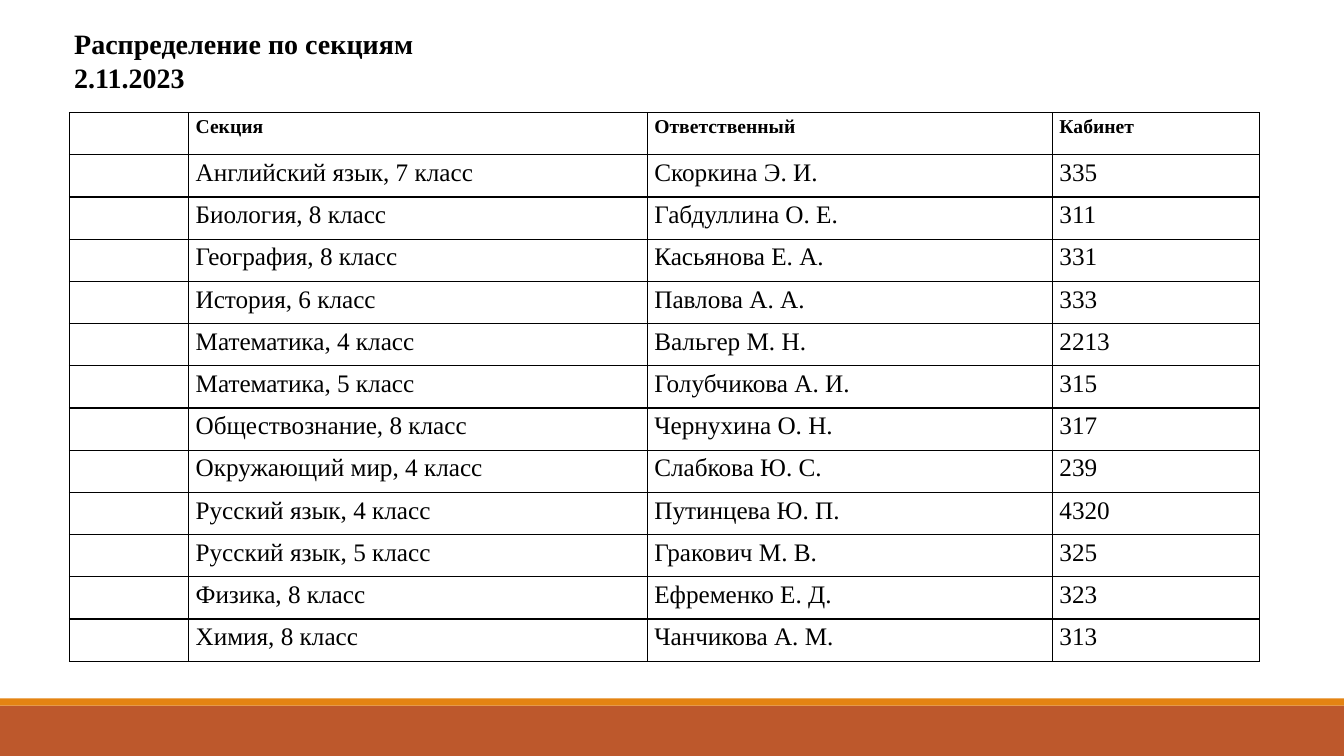
from dataclasses import dataclass

from lxml import etree
from pptx import Presentation
from pptx.dml.color import RGBColor
from pptx.enum.shapes import MSO_SHAPE
from pptx.enum.text import MSO_ANCHOR, MSO_AUTO_SIZE
from pptx.oxml.ns import qn
from pptx.util import Cm, Pt

RECT = MSO_SHAPE.RECTANGLE
MIDDLE = MSO_ANCHOR.MIDDLE
GROW = MSO_AUTO_SIZE.SHAPE_TO_FIT_TEXT


@dataclass(frozen=True)
class Theme:
    """Colours, font and type sizes of the slide."""
    ink: str = "000000"
    paper: str = "FFFFFF"
    rust: str = "BD582C"
    amber: str = "E48312"
    font: str = "Times New Roman"
    title: int = 20
    head: int = 14
    body: int = 18
    rule: int = 1


THEME = Theme()
TITLE = ("Распределение по секциям", "2.11.2023")
COLS = (3, 11.56, 10.21, 5.23)
HEAD = ("Секция", "Ответственный", "Кабинет")
ROWS = (
    ("Английский язык, 7 класс", "Скоркина Э. И.", "335"),
    ("Биология, 8 класс", "Габдуллина О. Е.", "311"),
    ("География, 8 класс", "Касьянова Е. А.", "331"),
    ("История, 6 класс", "Павлова А. А.", "333"),
    ("Математика, 4 класс", "Вальгер М. Н.", "2213"),
    ("Математика, 5 класс", "Голубчикова А. И.", "315"),
    ("Обществознание, 8 класс", "Чернухина О. Н.", "317"),
    ("Окружающий мир, 4 класс", "Слабкова Ю. С.", "239"),
    ("Русский язык, 4 класс", "Путинцева Ю. П.", "4320"),
    ("Русский язык, 5 класс", "Гракович М. В.", "325"),
    ("Физика, 8 класс", "Ефременко Е. Д.", "323"),
    ("Химия, 8 класс", "Чанчикова А. М.", "313"),
)


def style(par, size, bold):
    """Format every run of a paragraph."""
    for run in par.runs:
        font = run.font
        font.name, font.size, font.bold = THEME.font, Pt(size), bold
        font.color.rgb = RGBColor.from_string(THEME.ink)


def border(cell):
    """Rule all four sides of a cell."""
    props = cell._tc.get_or_add_tcPr()
    for spot, side in enumerate(("a:lnL", "a:lnR", "a:lnT", "a:lnB")):
        line = etree.Element(qn(side), w=str(Pt(THEME.rule)))
        fill = etree.SubElement(line, qn("a:solidFill"))
        etree.SubElement(fill, qn("a:srgbClr"), val=THEME.ink)
        props.insert(spot, line)


def add_footer(slide, left, top, width, height):
    """Draw the amber strip and the rust band below it."""
    strip = 0.18
    for y, tall, tint in ((top + strip, height - strip, THEME.rust),
                          (top, strip, THEME.amber)):
        band = slide.shapes.add_shape(RECT, Cm(left), Cm(y), Cm(width), Cm(tall))
        band.shadow.inherit = False
        band.fill.solid()
        band.fill.fore_color.rgb = RGBColor.from_string(tint)
        band.line.fill.background()


def add_title(slide, left, top, width, height):
    """Write the two-line title."""
    box = slide.shapes.add_textbox(Cm(left), Cm(top), Cm(width), Cm(height))
    frame = box.text_frame
    frame.text = "\n".join(TITLE)
    frame.word_wrap = False
    frame.auto_size = GROW
    frame.vertical_anchor = MIDDLE
    for par in frame.paragraphs:
        style(par, THEME.title, True)


def fill_cell(cell, text, size, bold):
    """Set the text, margins, fill and rules of a cell."""
    cell.text = text
    cell.margin_left = cell.margin_right = Cm(0.18)
    cell.margin_top = cell.margin_bottom = 0
    cell.fill.solid()
    cell.fill.fore_color.rgb = RGBColor.from_string(THEME.paper)
    par = cell.text_frame.paragraphs[0]
    par.line_spacing = 1.15
    style(par, size, bold)
    border(cell)


def add_grid(slide, left, top, width, height):
    """Build the table of sections with equal rows."""
    lines = (HEAD, *ROWS)
    table = slide.shapes.add_table(len(lines), len(COLS), Cm(left), Cm(top),
                                   Cm(width), Cm(height)).table
    table.first_row = table.horz_banding = False
    for col, wide in zip(table.columns, COLS):
        col.width = Cm(wide)
    for r, line in enumerate(lines):
        table.rows[r].height = Cm(height / len(lines))
        size = THEME.body if r else THEME.head
        for c, text in enumerate(("", *line)):
            fill_cell(table.cell(r, c), text, size, r == 0)


def main():
    """Build and save the slide."""
    deck = Presentation()
    deck.slide_width, deck.slide_height = Cm(33.87), Cm(19.05)
    slide = deck.slides.add_slide(deck.slide_layouts[6])
    add_footer(slide, 0, 17.6, 33.87, 1.45)
    add_grid(slide, 1.75, 2.84, sum(COLS), 13.82)
    add_title(slide, 1.62, 0.54, 9.3, 1.96)
    deck.save("out.pptx")


if __name__ == "__main__":
    main()
